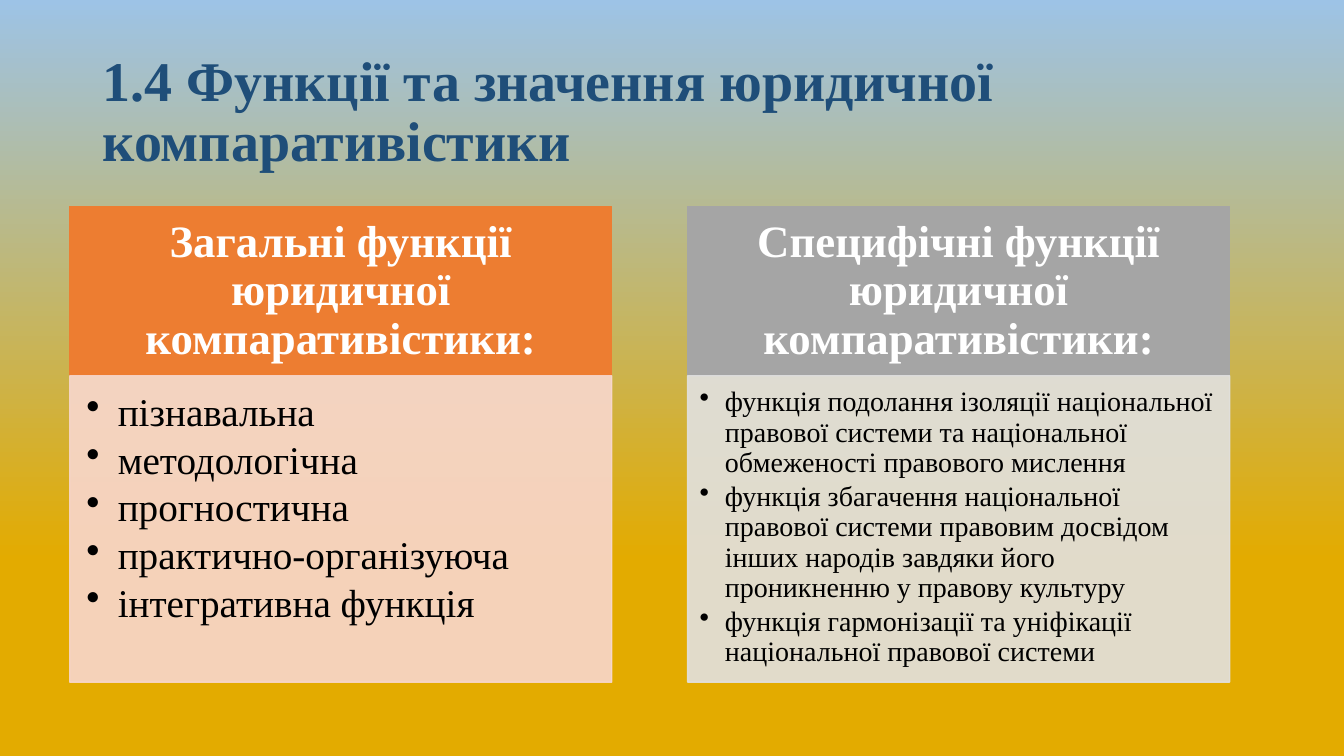
from lxml import etree
from pptx import Presentation
from pptx.dml.color import RGBColor
from pptx.enum.shapes import MSO_SHAPE
from pptx.enum.text import MSO_ANCHOR, MSO_AUTO_SIZE, PP_ALIGN
from pptx.oxml.ns import qn
from pptx.util import Cm, Pt

RECT = MSO_SHAPE.RECTANGLE
TOP, MID = MSO_ANCHOR.TOP, MSO_ANCHOR.MIDDLE
LEFT, MIDDLE = PP_ALIGN.LEFT, PP_ALIGN.CENTER
FIXED = MSO_AUTO_SIZE.NONE

HEX = {
    "sky": "9DC3E6", "gold": "E3AB00", "navy": "1F4E79",
    "white": "FFFFFF", "black": "000000",
    "orange": "ED7D31", "peach": "F8D7CE",
    "gray": "A5A5A5", "pale": "E1E1E1",
}
FONT = "Times New Roman"

# Shared geometry of the two columns, in cm
WIDTH, FIRST, STEP = 13.66, 1.76, 15.57
HEAD_TOP, HEAD_HIGH = 5.21, 4.25
LIST_TOP, LIST_HIGH = 9.47, 7.72
HEAD_PAD = (0.64, 0.38, 0.64, 0.36)

TITLE = "1.4 Функції та значення юридичної компаративістики"
COLUMNS = [
    {
        "head": "Загальні функції юридичної компаративістики:",
        "fill": "orange", "tint": "peach",
        "size": 28, "hang": 0.79, "pad": (0.42, 0.42, 0.56, 0.61),
        "items": [
            "пізнавальна",
            "методологічна",
            "прогностична",
            "практично-організуюча",
            "інтегративна функція",
        ],
    },
    {
        "head": "Специфічні функції юридичної компаративістики:",
        "fill": "gray", "tint": "pale",
        "size": 20, "hang": 0.64, "pad": (0.3, 0.3, 0.35, 0.43),
        "items": [
            "функція подолання ізоляції національної правової системи"
            " та національної обмеженості правового мислення",
            "функція збагачення національної правової системи правовим"
            " досвідом інших народів завдяки його проникненню у правову"
            " культуру",
            "функція гармонізації та уніфікації національної правової"
            " системи",
        ],
    },
]


def color(name):
    return RGBColor.from_string(HEX[name])


def apply(target, values):
    for name, value in values.items():
        setattr(target, name, value)


def place(shape, left, top, width, height):
    apply(shape, {"left": Cm(left), "top": Cm(top),
                  "width": Cm(width), "height": Cm(height)})


def write(frame, lines, size, tone, bold=False, align=LEFT, after=0):
    apply(frame, {"word_wrap": True, "auto_size": FIXED})
    for i, line in enumerate(lines):
        para = frame.add_paragraph() if i else frame.paragraphs[0]
        apply(para, {"alignment": align, "line_spacing": 0.9,
                     "space_before": Pt(0), "space_after": Pt(after)})
        run = para.add_run()
        run.text = line
        apply(run.font, {"name": FONT, "size": Pt(size), "bold": bold})
        run.font.color.rgb = color(tone)


def add_box(slide, left, top, high, tone, pad, anchor):
    box = slide.shapes.add_shape(RECT, Cm(left), Cm(top), Cm(WIDTH), Cm(high))
    box.shadow.inherit = False
    box.fill.solid()
    box.fill.fore_color.rgb = color(tone)
    box.line.color.rgb = color(tone)
    box.line.width = Pt(1)
    sides = ("margin_left", "margin_top", "margin_right", "margin_bottom")
    apply(box.text_frame, dict(zip(sides, map(Cm, pad))))
    box.text_frame.vertical_anchor = anchor
    return box


def fade(box, percent):
    for tint in box.fill._xPr.iter(qn("a:srgbClr")):
        alpha = etree.SubElement(tint, qn("a:alpha"))
        alpha.set("val", str(percent * 1000))


def add_dots(frame, hang):
    for para in frame.paragraphs:
        para.level = 1
        props = para._p.get_or_add_pPr()
        props.set("marL", str(Cm(hang)))
        props.set("indent", str(-Cm(hang)))
        etree.SubElement(props, qn("a:buChar")).set("char", "•")


def add_column(slide, left, col):
    # Heading block
    head = add_box(slide, left, HEAD_TOP, HEAD_HIGH, col["fill"],
                   HEAD_PAD, MID)
    write(head.text_frame, [col["head"]], 32, "white", True, MIDDLE)
    # Bulleted list
    body = add_box(slide, left, LIST_TOP, LIST_HIGH, col["tint"],
                   col["pad"], TOP)
    fade(body, 90)
    write(body.text_frame, col["items"], col["size"], "black",
          after=col["size"] * 0.14)
    add_dots(body.text_frame, col["hang"])


def set_back(slide):
    fill = slide.background.fill
    fill.gradient()
    fill.gradient_angle = 90
    for stop, spot, tone in zip(fill.gradient_stops, (0.26, 1),
                                ("gold", "sky")):
        stop.position = spot
        stop.color.rgb = color(tone)


def main():
    deck = Presentation()
    apply(deck, {"slide_width": Cm(33.87), "slide_height": Cm(19.05)})
    slide = deck.slides.add_slide(deck.slide_layouts.get_by_name("Title Only"))
    set_back(slide)

    # Title
    title = slide.shapes.title
    place(title, 2.33, 1.02, 29.21, 3.68)
    title.text_frame.vertical_anchor = MID
    write(title.text_frame, [TITLE], 40, "navy", True)

    # Two columns
    for i, col in enumerate(COLUMNS):
        add_column(slide, FIRST + i * STEP, col)

    deck.save("out.pptx")


if __name__ == "__main__":
    main()
